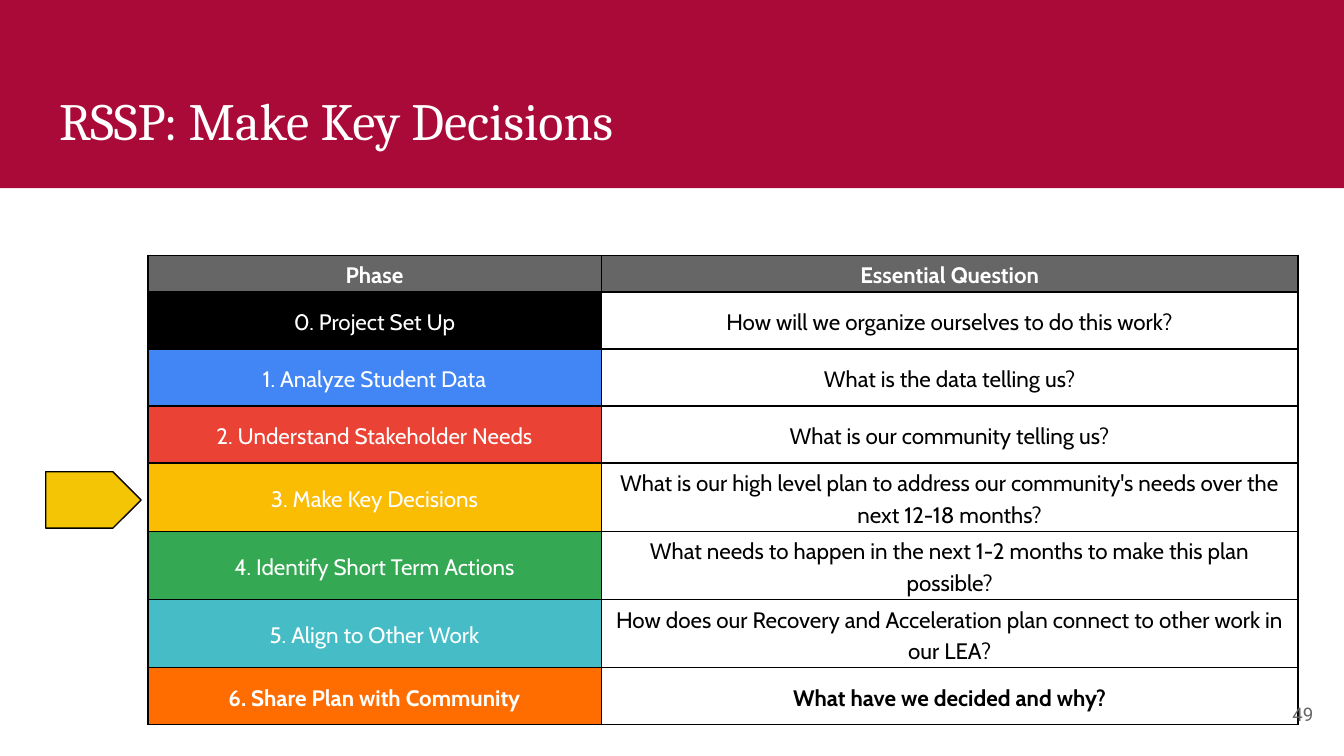
from lxml.etree import SubElement as Sub
from pptx import Presentation
from pptx.dml.color import RGBColor
from pptx.enum.shapes import MSO_SHAPE as Shape
from pptx.enum.text import MSO_ANCHOR as Anchor, PP_ALIGN as Align
from pptx.oxml.ns import qn
from pptx.util import Inches, Pt

TITLE = "RSSP: Make Key Decisions"
PAGE = "49"
WHITE, BLACK, GRAY = "FFFFFF", "000000", "666666"
ROWS = [
    ("Phase", "Essential Question", GRAY),
    ("0. Project Set Up", "How will we organize ourselves to do this work?", BLACK),
    ("1. Analyze Student Data", "What is the data telling us?", "4285F4"),
    ("2. Understand Stakeholder Needs", "What is our community telling us?", "EA4335"),
    ("3. Make Key Decisions", "What is our high level plan to address our community's "
     "needs over the next 12-18 months?", "FBBC04"),
    ("4. Identify Short Term Actions", "What needs to happen in the next 1-2 months to "
     "make this plan possible?", "34A853"),
    ("5. Align to Other Work", "How does our Recovery and Acceleration plan connect to "
     "other work in our LEA?", "46BDC6"),
    ("6. Share Plan with Community", "What have we decided and why?", "FF6D01"),
]
WIDE, HIGH = 8.56, 3.38
COLS = (3.37, 5.18)
HEAD, BODY = 0.23, 2.97
BOLD = (0, len(ROWS) - 1)
CELL = {
    "margin_left": Inches(0.03), "margin_right": Inches(0.03),
    "margin_top": Inches(0.02), "margin_bottom": Inches(0.02),
    "vertical_anchor": Anchor.MIDDLE,
}
FRAME = {
    "margin_left": Inches(0.1), "margin_right": Inches(0.1),
    "margin_top": Inches(0.1), "margin_bottom": Inches(0.1),
    "vertical_anchor": Anchor.MIDDLE, "word_wrap": True,
}


def rgb(code):
    return RGBColor.from_string(code)


def box(*sizes):
    return [Inches(size) for size in sizes]


def apply(thing, values):
    for name, value in values.items():
        setattr(thing, name, value)


def write(frame, text, font, size, color, align, bold=False, space=1.0):
    para = frame.paragraphs[0]
    apply(para, {"alignment": align, "line_spacing": space})
    run = para.add_run()
    run.text = text
    apply(run.font, {"name": font, "size": Pt(size), "bold": bold})
    run.font.color.rgb = rgb(color)


def paint(shape, fill, line=None):
    shape.shadow.inherit = False
    shape.fill.solid()
    shape.fill.fore_color.rgb = rgb(fill)
    if line:
        shape.line.color.rgb = rgb(line)
        shape.line.width = Pt(0.75)
    else:
        shape.line.fill.background()


def edge(cell):
    props = cell._tc.get_or_add_tcPr()
    for side in ("lnL", "lnR", "lnT", "lnB"):
        line = Sub(props, qn("a:" + side), w=str(Pt(0.94)))
        Sub(Sub(line, qn("a:solidFill")), qn("a:srgbClr"), val=BLACK)


def fill_cell(cell, text, fill, bold):
    apply(cell, CELL)
    edge(cell)
    if fill:
        cell.fill.solid()
        cell.fill.fore_color.rgb = rgb(fill)
    else:
        cell.fill.background()
    color = WHITE if fill else BLACK
    write(cell.text_frame, text, "Cabin", 12, color, Align.CENTER, bold, 1.15)


def add_grid(slide):
    place = box(1.1, 1.9, WIDE, HIGH)
    frame = slide.shapes.add_table(len(ROWS), len(COLS), *place)
    grid = frame.table
    for col, width in zip(grid.columns, COLS):
        col.width = Inches(width * WIDE / sum(COLS))
    for i, (phase, ask, color) in enumerate(ROWS):
        grid.rows[i].height = Inches(BODY / (len(ROWS) - 1) if i else HEAD)
        fill_cell(grid.cell(i, 0), phase, color, i in BOLD)
        fill_cell(grid.cell(i, 1), ask, None if i else color, i in BOLD)
    frame.height = Inches(HIGH)


def main():
    deck = Presentation()
    deck.slide_width, deck.slide_height = box(10, 10 * 9 / 16)
    slide = deck.slides.add_slide(deck.slide_layouts[5])
    shapes = slide.shapes

    band = shapes.add_shape(Shape.RECTANGLE, *box(0, 0, 10, 1.4))
    paint(band, "AA0A38")
    title = shapes.title
    band.element.addnext(title.element)
    apply(title, dict(zip(("left", "top", "width", "height"), box(0.34, 0.55, 9.32, 0.68))))
    apply(title.text_frame, FRAME)
    write(title.text_frame, TITLE, "Cambria", 28, WHITE, Align.LEFT)

    add_grid(slide)
    arrow = shapes.add_shape(Shape.PENTAGON, *box(0.34, 3.51, 0.71, 0.42))
    paint(arrow, "F4C505", BLACK)

    page = shapes.add_textbox(*box(9.27, 5.1, 0.6, 0.43)).text_frame
    apply(page, FRAME)
    write(page, PAGE, "Roboto", 10, GRAY, Align.RIGHT)
    deck.save("out.pptx")


if __name__ == "__main__":
    main()
